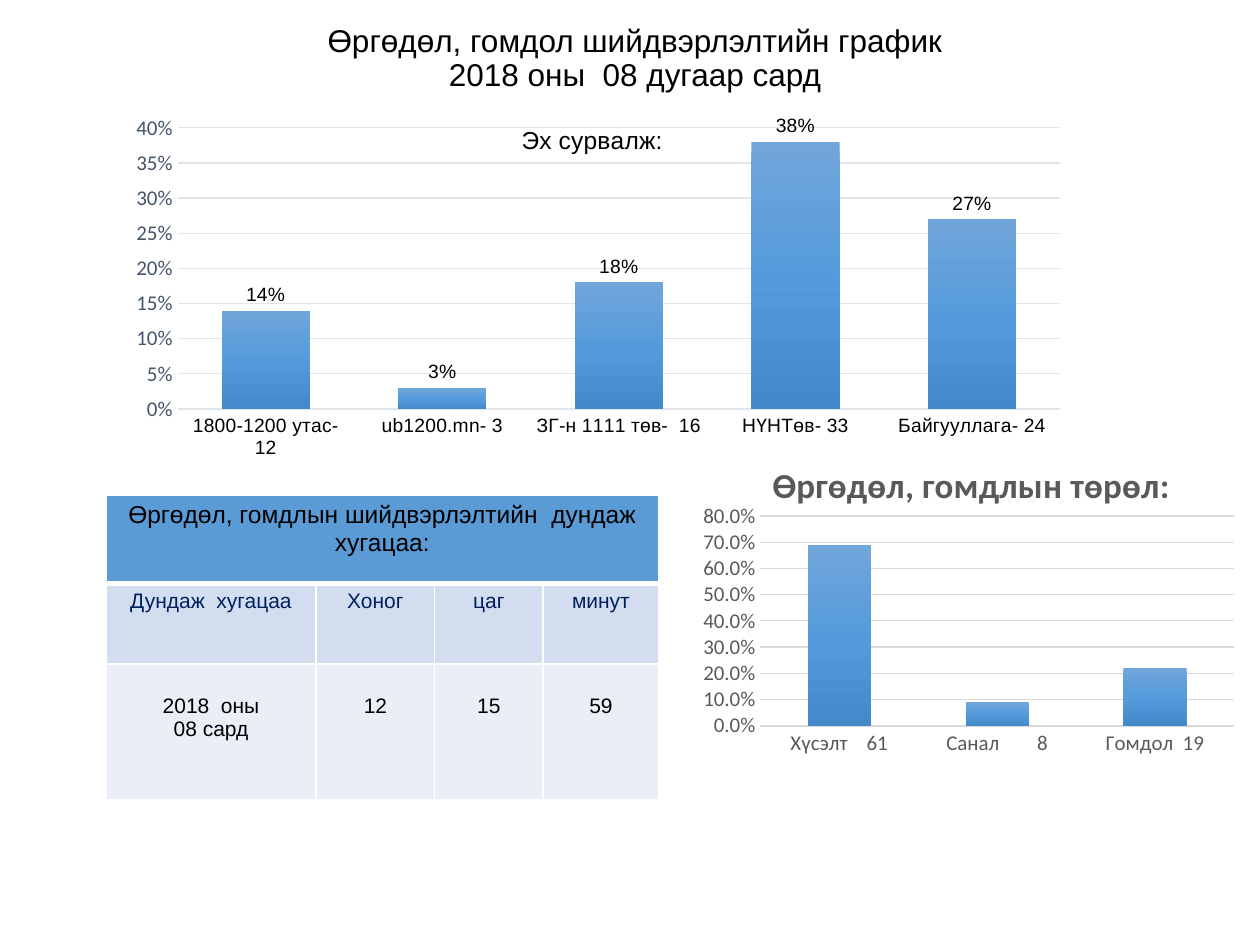
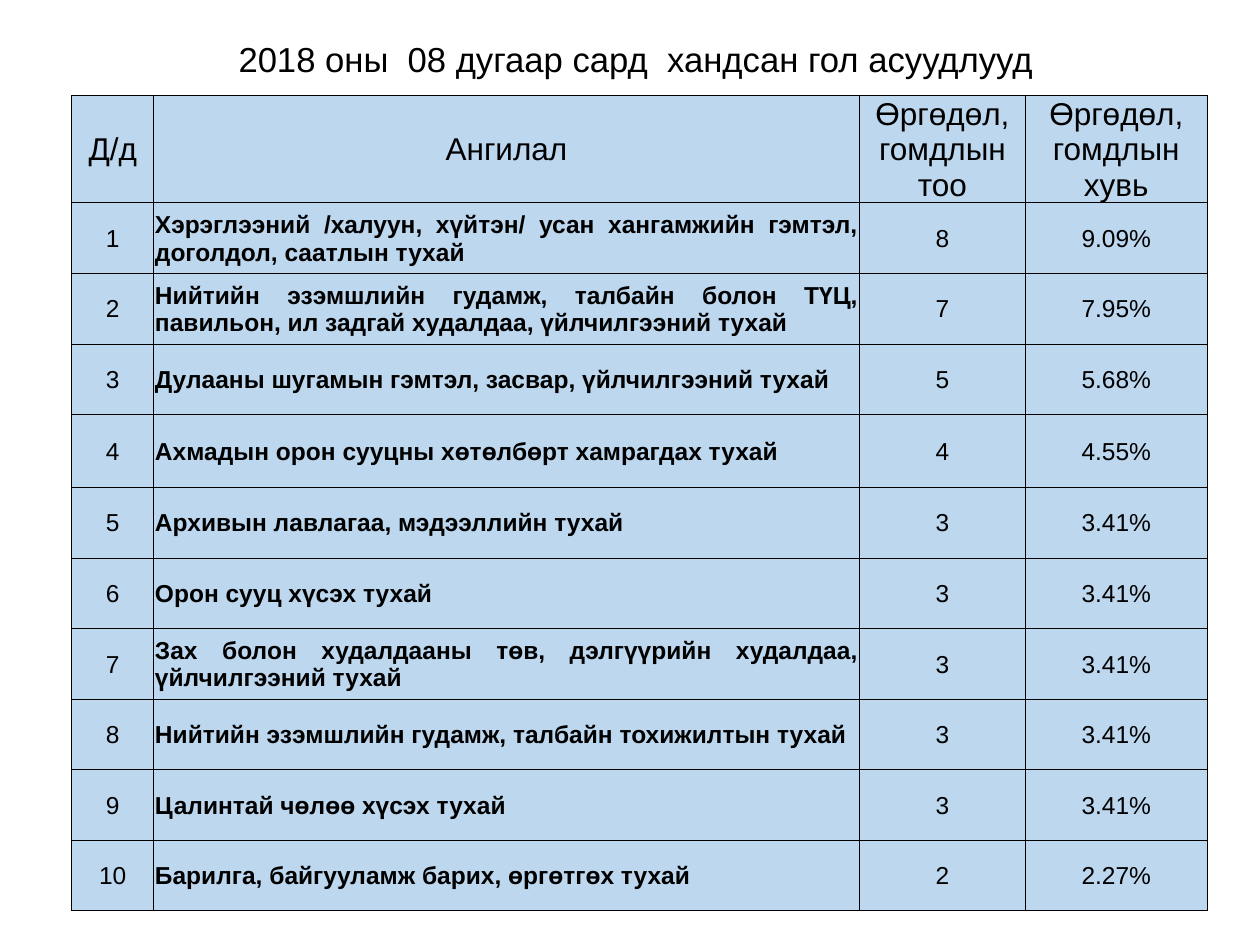
from copy import deepcopy

from lxml.etree import SubElement
from pptx import Presentation
from pptx.chart.data import CategoryChartData
from pptx.dml.color import RGBColor
from pptx.enum.chart import XL_CHART_TYPE, XL_LABEL_POSITION, XL_TICK_MARK
from pptx.enum.text import MSO_ANCHOR, MSO_AUTO_SIZE, PP_ALIGN
from pptx.oxml.ns import qn
from pptx.util import Inches, Pt

BLACK, WHITE, NAVY = "000000", "FFFFFF", "002060"
HEAD, BAND, PALE, SKY = "5B9BD5", "D2DEEF", "EAEFF7", "BDD7EE"
GREY, SLATE, RULE, MIST = "595959", "44546A", "D9D9D9", "E0E5EB"
SHADES = [(0, "71A6DB"), (0.5, "559BDB"), (1, "448ACA")]

TOPICS = [
    ("Хэрэглээний /халуун, хүйтэн/ усан хангамжийн гэмтэл, доголдол, саатлын тухай", "8", "9.09%"),
    ("Нийтийн эзэмшлийн гудамж, талбайн болон ТҮЦ, павильон, ил задгай худалдаа, "
     "үйлчилгээний тухай", "7", "7.95%"),
    ("Дулааны шугамын гэмтэл, засвар, үйлчилгээний тухай", "5", "5.68%"),
    ("Ахмадын орон сууцны хөтөлбөрт хамрагдах тухай", "4", "4.55%"),
    ("Архивын лавлагаа, мэдээллийн тухай", "3", "3.41%"),
    ("Орон сууц хүсэх тухай", "3", "3.41%"),
    ("Зах болон худалдааны төв, дэлгүүрийн худалдаа, үйлчилгээний тухай", "3", "3.41%"),
    ("Нийтийн эзэмшлийн гудамж, талбайн тохижилтын тухай", "3", "3.41%"),
    ("Цалинтай чөлөө хүсэх тухай", "3", "3.41%"),
    ("Барилга, байгууламж барих, өргөтгөх тухай", "2", "2.27%"),
]


def rgb(code):
    return RGBColor.from_string(code)


def style(font, size, color=BLACK, name="Arial", bold=False):
    font.size, font.name, font.bold = Pt(size), name, bold
    font.color.rgb = rgb(color)


def write(frame, text, align=PP_ALIGN.CENTER, space=None, **look):
    """Fill a text frame, one paragraph for each line of text."""
    frame.text = text
    for para in frame.paragraphs:
        para.alignment = align
        if space:
            para.line_spacing = space
        for run in para.runs:
            style(run.font, **look)


def edge(cell, color, **widths):
    """Draw cell borders; widths are points keyed by L, R, T and B."""
    props = cell._tc.get_or_add_tcPr()
    for side, width in widths.items():
        line = SubElement(props, qn("a:ln" + side), w=str(Pt(width)))
        fill = SubElement(line, qn("a:solidFill"))
        SubElement(fill, qn("a:srgbClr"), val=color)


def place(parent, spot, **parts):
    """Give a chart part a manual layout, in fractions of the chart."""
    layout = parent.find(qn("c:layout"))
    if layout is None:
        layout = SubElement(parent, qn("c:layout"))
        parent.insert(spot, layout)
    manual = SubElement(layout, qn("c:manualLayout"))
    if "w" in parts:
        SubElement(manual, qn("c:layoutTarget"), val="inner")
    for key in "xy":
        SubElement(manual, qn(f"c:{key}Mode"), val="edge")
    for key, value in parts.items():
        SubElement(manual, qn("c:" + key), val=str(value))


def shade(fill):
    """Fill from top to bottom through the three shades."""
    fill.gradient()
    fill.gradient_angle = 270
    stops = fill._xPr.find(qn("a:gradFill")).find(qn("a:gsLst"))
    stops.insert(1, deepcopy(stops[0]))
    for stop, (spot, color) in zip(fill.gradient_stops, SHADES):
        stop.position = spot
        stop.color.rgb = rgb(color)


class Deck:
    def __init__(self):
        self.show = Presentation()
        self.show.slide_width, self.show.slide_height = Inches(10), Inches(7.5)
        self.slide = None

    def page(self, text, box, size):
        """Start a slide with its title."""
        self.slide = self.show.slides.add_slide(self.show.slide_layouts[5])
        title = self.slide.shapes.title
        title.left, title.top, title.width, title.height = map(Inches, box)
        frame = title.text_frame
        frame.auto_size = MSO_AUTO_SIZE.NONE
        frame.vertical_anchor = MSO_ANCHOR.MIDDLE
        write(frame, text, space=0.9, size=size)

    def table(self, left, top, cols, rows):
        box = (left, top, sum(cols), sum(rows))
        grid = self.slide.shapes.add_table(len(rows), len(cols), *map(Inches, box)).table
        grid.first_row = grid.horz_banding = False
        for col, width in zip(grid.columns, cols):
            col.width = Inches(width)
        for row, height in zip(grid.rows, rows):
            row.height = Inches(height)
        return grid

    def cell(self, cell, text, fill, line, sides, **look):
        edge(cell, line, **sides)
        cell.fill.solid()
        cell.fill.fore_color.rgb = rgb(fill)
        write(cell.text_frame, text, **look)

    def chart(self, box, kind, cats, values, title, spot, look, plot, gap, lap,
              top, step, form, ink, line, rule):
        """Add a one-series column chart; ink styles its two axes."""
        data = CategoryChartData()
        data.categories = cats
        data.add_series("Series 1", values)
        chart = self.slide.shapes.add_chart(kind, *map(Inches, box), data).chart
        style(chart.font, 10, name="Calibri")
        chart.has_legend = False
        chart.has_title = True
        write(chart.chart_title.text_frame, title, **look)
        place(chart.chart_title._element, 1, **dict(zip("xy", spot)))
        place(chart._chartSpace.chart.plotArea, 0, **dict(zip("xywh", plot)))

        for axis, font in zip((chart.category_axis, chart.value_axis), ink):
            axis.major_tick_mark = axis.minor_tick_mark = XL_TICK_MARK.NONE
            style(axis.tick_labels.font, **font)
        base = chart.category_axis.format.line
        base.color.rgb, base.width = rgb(line), Pt(rule)
        scale = chart.value_axis
        scale.minimum_scale, scale.maximum_scale, scale.major_unit = 0, top, step
        scale.format.line.fill.background()
        grid = scale.major_gridlines.format.line
        grid.color.rgb, grid.width = rgb(line), Pt(0.75)
        scale.tick_labels.number_format = form
        scale.tick_labels.number_format_is_linked = False

        bars = chart.plots[0]
        bars.gap_width, bars.overlap, bars.vary_by_categories = gap, lap, False
        shade(bars.series[0].format.fill)
        return bars

    def label(self, bars):
        bars.has_data_labels = True
        marks = bars.data_labels
        marks.show_value = True
        marks.position = XL_LABEL_POSITION.OUTSIDE_END
        marks.number_format, marks.number_format_is_linked = "0%", False
        style(marks.font, 11)


def graphs(deck):
    deck.page("Өргөдөл, гомдол шийдвэрлэлтийн график\n2018 оны  08 дугаар сард",
              (0.73, 0.17, 8.62, 0.6), 18)

    grid = deck.table(0.84, 3.93, [1.67, 0.94, 0.86, 0.92], [0.7, 0.64, 1.08])
    lines = [
        (["Өргөдөл, гомдлын шийдвэрлэлтийн  дундаж хугацаа:", "", "", ""], HEAD, 14, BLACK, 1, 3),
        (["Дундаж  хугацаа", "Хоног", "цаг", "минут"], BAND, 12, NAVY, 3, 1),
        (["2018  оны\n08 сард", "12", "15", "59"], PALE, 12, BLACK, 1, 1),
    ]
    for r, (words, fill, size, color, over, under) in enumerate(lines):
        for c, word in enumerate(words):
            deck.cell(grid.cell(r, c), word, fill, WHITE, dict(L=1, R=1, T=over, B=under),
                      size=size, color=color)
    grid.cell(0, 0).merge(grid.cell(0, 3))
    for c in range(4):
        grid.cell(2, c).margin_top = Inches(0.24)

    soft = dict(size=12, color=GREY, name="Calibri")
    deck.chart((5.21, 3.57, 4.59, 2.92), XL_CHART_TYPE.COLUMN_STACKED,
               ["Хүсэлт    61", "Санал        8", "Гомдол  19"], [0.69, 0.09, 0.22],
               title="Өргөдөл, гомдлын төрөл:", spot=(0.19, 0.01),
               look=dict(size=20, color=GREY, name="Calibri", bold=True),
               plot=(0.18, 0.18, 0.82, 0.57), gap=150, lap=100, top=0.8, step=0.1,
               form="0.0%", ink=(soft, soft), line=RULE, rule=1)

    bars = deck.chart((0.87, 0.86, 7.7, 3.1), XL_CHART_TYPE.COLUMN_CLUSTERED,
                      ["1800-1200 утас- 12", "ub1200.mn- 3", "ЗГ-н 1111 төв-  16",
                       "НҮНТөв- 33", "Байгууллага- 24"], [0.14, 0.03, 0.18, 0.38, 0.27],
                      title="Эх сурвалж:", spot=(0.42, 0.03), look=dict(size=14),
                      plot=(0.07, 0.05, 0.91, 0.72), gap=100, lap=-24, top=0.4, step=0.05,
                      form="0%", ink=(dict(size=11), dict(size=12, color=SLATE, name="Calibri")),
                      line=MIST, rule=0.75)
    deck.label(bars)


def topics(deck):
    deck.page("2018 оны  08 дугаар сард  хандсан гол асуудлууд", (0.81, 0.16, 8.47, 0.65), 19.8)
    heads = ("Д/д", "Ангилал", "Өргөдөл, гомдлын тоо", "Өргөдөл, гомдлын хувь")
    lines = [heads] + [(str(n), *topic) for n, topic in enumerate(TOPICS, 1)]
    rows = [0.68] + [0.58 if n == 4 else 0.56 for n in range(1, len(lines))]
    grid = deck.table(0.57, 0.76, [0.65, 5.6, 1.32, 1.44], rows)
    for r, words in enumerate(lines):
        for c, word in enumerate(words):
            cell = grid.cell(r, c)
            cell.vertical_anchor = MSO_ANCHOR.MIDDLE
            cell.margin_left = cell.margin_right = cell.margin_top = Inches(0.01)
            cell.margin_bottom = 0
            topic = r > 0 and c == 1
            deck.cell(cell, word, SKY, BLACK, dict.fromkeys("LRTB", 0.5),
                      size=14 if r else 18, bold=topic,
                      align=PP_ALIGN.JUSTIFY if topic else PP_ALIGN.CENTER)


def main():
    deck = Deck()
    graphs(deck)
    topics(deck)
    deck.show.save("out.pptx")


if __name__ == "__main__":
    main()
